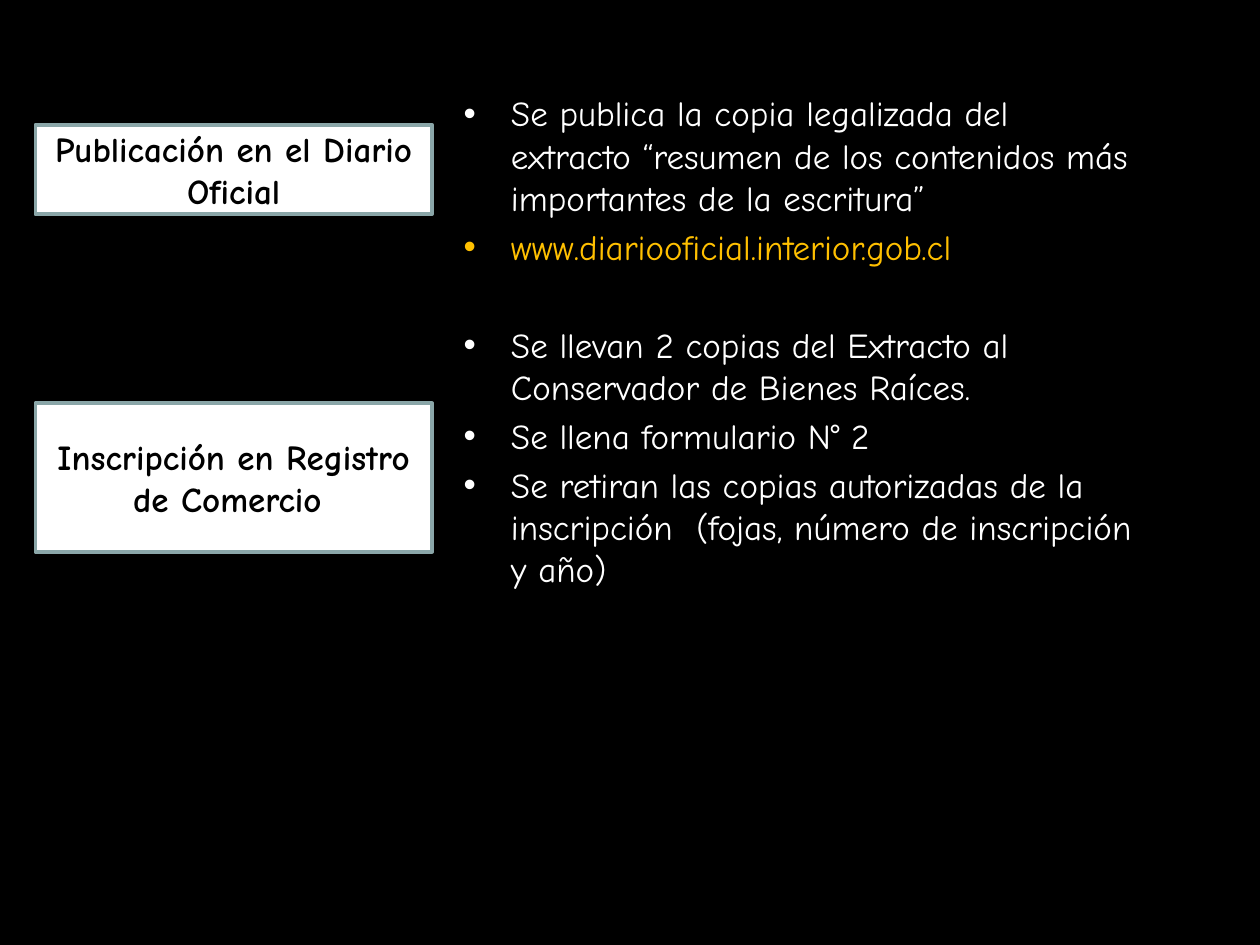
"""Build the slide on publishing and registering a company extract."""
from typing import NamedTuple

from pptx import Presentation
from pptx.dml.color import RGBColor
from pptx.enum.shapes import MSO_SHAPE
from pptx.enum.text import MSO_ANCHOR, MSO_AUTO_SIZE, PP_ALIGN
from pptx.util import Pt

COLORS = {
    "background": "000000",
    "white": "FFFFFF",
    "black": "000000",
    "link": "FFC000",
    "border": "8AA6A8",
}
FONT = "Comic Neue"
BOX_LEFT, BOX_WIDTH = 20.16, 226.8


class Step(NamedTuple):
    label: str
    top: float
    height: float


class Bullet(NamedTuple):
    text: str
    color: str = "white"
    space_before: float = 4


STEPS = [
    Step("Publicación en el Diario Oficial", 71.28, 51.12),
    Step("Inscripción en Registro de Comercio ", 230.4, 84.96),
]
BULLETS = [
    Bullet(
        "Se publica la copia legalizada del extracto “resumen de los "
        "contenidos más importantes de la escritura”",
        space_before=0,
    ),
    Bullet("www.diariooficial.interior.gob.cl", color="link"),
    Bullet(
        "Se llevan 2 copias del Extracto al Conservador de Bienes Raíces.",
        space_before=32,
    ),
    Bullet("Se llena formulario N° 2"),
    Bullet(
        "Se retiran las copias autorizadas de la inscripción  "
        "(fojas, número de inscripción y año)"
    ),
]


def rgb(name: str) -> RGBColor:
    return RGBColor.from_string(COLORS[name])


def write_text(paragraph, text: str, *, color: str, bold: bool = False,
               align=PP_ALIGN.LEFT, space_before: float = 0) -> None:
    paragraph.alignment = align
    paragraph.space_before = Pt(space_before)
    run = paragraph.add_run()
    run.text = text
    run.font.name = FONT
    run.font.size = Pt(20)
    run.font.bold = bold
    run.font.color.rgb = rgb(color)


def draw_step(slide, step: Step) -> None:
    shape = slide.shapes.add_shape(
        MSO_SHAPE.RECTANGLE, Pt(BOX_LEFT), Pt(step.top),
        Pt(BOX_WIDTH), Pt(step.height),
    )
    shape.shadow.inherit = False
    shape.fill.solid()
    shape.fill.fore_color.rgb = rgb("white")
    shape.line.color.rgb = rgb("border")
    shape.line.width = Pt(2)
    frame = shape.text_frame
    frame.word_wrap = True
    frame.vertical_anchor = MSO_ANCHOR.MIDDLE
    write_text(frame.paragraphs[0], step.label, color="black", bold=True,
               align=PP_ALIGN.CENTER)


def fill_body(body, bullets: list[Bullet]) -> None:
    body.left, body.top = Pt(257.76), Pt(48.96)
    body.width, body.height = Pt(396.72), Pt(368.64)
    frame = body.text_frame
    frame.word_wrap = True
    frame.auto_size = MSO_AUTO_SIZE.NONE
    for index, bullet in enumerate(bullets):
        paragraph = frame.add_paragraph() if index else frame.paragraphs[0]
        write_text(paragraph, bullet.text, color=bullet.color,
                   space_before=bullet.space_before)


def main() -> None:
    presentation = Presentation()
    presentation.slide_width, presentation.slide_height = Pt(720), Pt(540)
    slide = presentation.slides.add_slide(presentation.slide_layouts[1])
    slide.background.fill.solid()
    slide.background.fill.fore_color.rgb = rgb("background")
    title = slide.shapes.title.element
    title.getparent().remove(title)
    fill_body(slide.placeholders[1], BULLETS)
    for step in STEPS:
        draw_step(slide, step)
    presentation.save("out.pptx")


if __name__ == "__main__":
    main()
